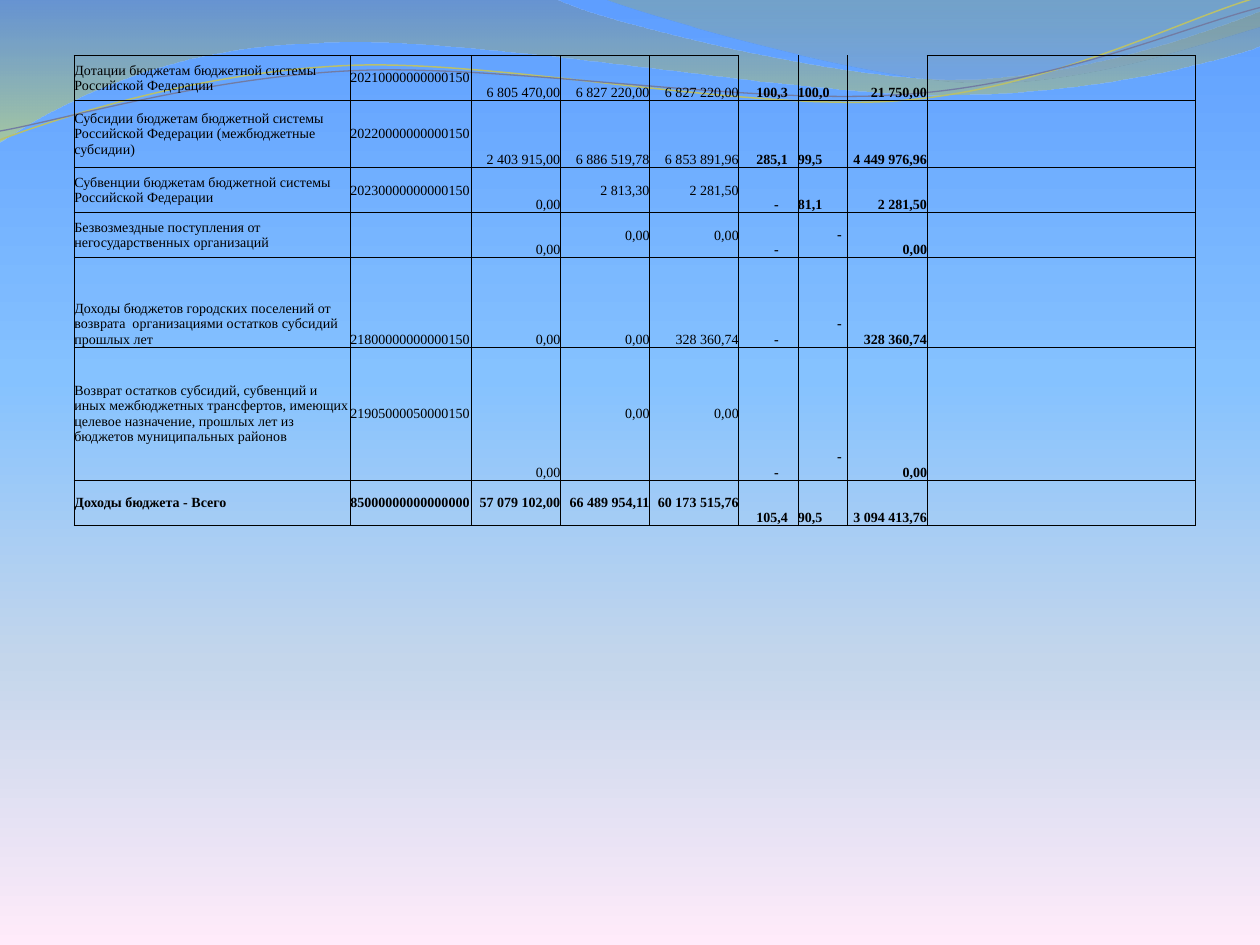
from lxml.etree import SubElement
from pptx import Presentation
from pptx.dml.color import RGBColor as RGB
from pptx.enum.text import MSO_ANCHOR as ANCHOR, PP_ALIGN as ALIGN
from pptx.oxml.ns import qn
from pptx.util import Inches, Pt

W, H = Inches(10), Inches(7.5)
COL, ROW = W / 100, H / 75
FONT, SIZE = "Times New Roman", Pt(8)
BLACK = RGB(0, 0, 0)
GOLD, SLATE = RGB(0xB9, 0xC0, 0x6C), RGB(0x72, 0x7C, 0xA3)
SKY = [(0, RGB(0x5E, 0x9E, 0xFF), 100), (40, RGB(0x85, 0xC2, 0xFF), 100),
       (70, RGB(0xC4, 0xD6, 0xEB), 100), (100, RGB(0xFF, 0xEB, 0xFA), 100)]
LEFT_TINT = [(0, RGB(0x72, 0x88, 0x9B), 45), (100, RGB(0xD3, 0xDE, 0x57), 55)]
RIGHT_TINT = [(0, RGB(0xA4, 0xAC, 0x50), 30), (80, RGB(0x84, 0xA3, 0xBD), 45)]

LEFT_WAVE = [[(0, 0)], [(44, -0.1)],
             [(47.6, 1.7), (66.4, 6.3), (75.8, 6.3)],
             [(85.3, 6.3), (95.8, 2.6), (100, 0.9)], [(100.1, 3.6)],
             [(98.3, 4.4), (87, 7.6), (74.6, 7.5)],
             [(62.2, 7.5), (38.2, 2.8), (25.7, 3.4)],
             [(12.9, 3.6), (4.6, 8.3), (-0.1, 11.3)], [(0, 0)]]
RIGHT_WAVE = [[(47.9, -0.1)],
              [(50.9, 1.1), (68.2, 6.2), (76.9, 6.5)],
              [(85.6, 6.9), (96.1, 3.2), (100, 2.1)],
              [(100, 0)], [(47.9, -0.1)]]
GOLD_LINE = [[(0, 11.1)],
             [(4.8, 9.3), (15.8, 5.7), (27.7, 5.2)],
             [(39.5, 4.7), (59.3, 8.9), (71.3, 8)],
             [(83.3, 7.1), (93.8, 1.5), (99.8, -0.2)]]
SLATE_LINE = [[(0, 10.4)],
              [(4.7, 9.6), (16.4, 6.1), (28.3, 5.6)],
              [(40.3, 5.1), (59.7, 8.4), (71.7, 7.5)],
              [(83.6, 6.7), (94.1, 2.1), (100, 0.6)]]

COL_WIDTHS = [21.9, 9.6, 7.08, 7.08, 7.08, 4.7, 3.95, 6.3, 21.3]
ROW_HEIGHTS = [3.57, 5.35, 3.57, 3.57, 7.1, 10.6, 3.57]
ANCHORS = ["mmbbb", "mmbbb", "mmbmm", "mmbmm", "bbbbb", "mmbmm", "mmmmm"]
RIGHT_COLS, BOLD_COLS, OPEN_TOP_COLS = (2, 3, 4, 7), (5, 6, 7), (5, 6, 7)
NUMBER_INDENT, DASH_INDENT, DASH_RAISE = {5: 1.4}, {5: 2.8, 6: 3.1}, {6: 1.25}
INCOME = [
    ["Дотации бюджетам бюджетной системы Российской Федерации", "20210000000000150",
     "6 805 470,00", "6 827 220,00", "6 827 220,00", "100,3", "100,0", "21 750,00", ""],
    ["Субсидии бюджетам бюджетной системы Российской Федерации (межбюджетные субсидии)",
     "20220000000000150",
     "2 403 915,00", "6 886 519,78", "6 853 891,96", "285,1", "99,5", "4 449 976,96", ""],
    ["Субвенции бюджетам бюджетной системы Российской Федерации", "20230000000000150",
     "0,00", "2 813,30", "2 281,50", "-", "81,1", "2 281,50", ""],
    ["Безвозмездные поступления от негосударственных организаций", "",
     "0,00", "0,00", "0,00", "-", "-", "0,00", ""],
    ["Доходы бюджетов городских поселений от возврата  организациями остатков "
     "субсидий прошлых лет", "21800000000000150",
     "0,00", "0,00", "328 360,74", "-", "-", "328 360,74", ""],
    ["Возврат остатков субсидий, субвенций и иных межбюджетных трансфертов, имеющих "
     "целевое назначение, прошлых лет из бюджетов муниципальных районов",
     "21905000050000150", "0,00", "0,00", "0,00", "-", "-", "0,00", ""],
    ["Доходы бюджета - Всего", "85000000000000000",
     "57 079 102,00", "66 489 954,11", "60 173 515,76", "105,4", "90,5",
     "3 094 413,76", ""],
]
TOTAL = len(INCOME) - 1


def set_gradient(fill, element, stops):
    """Apply a top-to-bottom gradient of (position, colour, opacity) stops."""
    fill.gradient()
    grad = element.find(".//" + qn("a:gradFill"))
    gs_list = grad.find(qn("a:gsLst"))
    gs_list.clear()
    for pos, color, opacity in stops:
        gs = SubElement(gs_list, qn("a:gs"), pos=str(pos * 1000))
        clr = SubElement(gs, qn("a:srgbClr"), val=str(color))
        if opacity < 100:
            SubElement(clr, qn("a:alpha"), val=str(opacity * 1000))
    grad.find(qn("a:lin")).set("ang", "5400000")


def bend(sp, segments):
    """Join each run of three points into one cubic curve."""
    lines = iter(sp.element.findall(".//" + qn("a:lnTo")))
    for segment in segments[1:]:
        group = [next(lines) for _ in segment]
        if len(group) == 3:
            curve = group[0]
            for line in group[1:]:
                curve.append(line[0])
                line.getparent().remove(line)
            curve.tag = qn("a:cubicBezTo")


def add_outline(slide, segments, close):
    """Add a shadowless freeform of straight and cubic segments."""
    start, *rest = [(round(x * COL), round(y * ROW))
                    for segment in segments for x, y in segment]
    builder = slide.shapes.build_freeform(*start, scale=1.0)
    builder.add_line_segments(rest, close=close)
    sp = builder.convert_to_shape()
    sp.shadow.inherit = False
    bend(sp, segments)
    return sp


def add_wave(slide, segments, stops):
    """Add a translucent wave without an outline."""
    sp = add_outline(slide, segments, True)
    set_gradient(sp.fill, sp.element.spPr, stops)
    sp.line.fill.background()


def add_curve(slide, segments, color, width):
    """Add an open curved line."""
    sp = add_outline(slide, segments, False)
    sp.fill.background()
    sp.line.color.rgb = color
    sp.line.width = Pt(width)


def set_borders(cell, row, col):
    """Draw the cell's borders, heavier at the sides and round the total row."""
    inner = col not in OPEN_TOP_COLS
    heavy = {"L": col == 0, "R": col == len(COL_WIDTHS) - 1,
             "T": inner and row == TOTAL, "B": inner and row >= TOTAL - 1}
    tc_pr = cell._tc.get_or_add_tcPr()
    for side, is_heavy in heavy.items():
        ln = SubElement(tc_pr, qn("a:ln" + side), w=str(Pt(1 if is_heavy else 0.5)))
        if side == "T" and row == 0 and not inner:
            SubElement(ln, qn("a:noFill"))
        else:
            SubElement(SubElement(ln, qn("a:solidFill")), qn("a:srgbClr"), val=str(BLACK))


def fill_cell(cell, text, row, col):
    """Write and format one table cell."""
    set_borders(cell, row, col)
    cell.fill.background()
    is_dash = text == "-"
    indent = (DASH_INDENT if is_dash else NUMBER_INDENT).get(col, 0)
    cell.margin_left = round(indent * COL)
    cell.margin_right = cell.margin_top = 0
    cell.margin_bottom = round(DASH_RAISE.get(col, 0) * ROW) if is_dash else 0
    middle = ANCHORS[row][col:col + 1] == "m"
    cell.vertical_anchor = ANCHOR.MIDDLE if middle else ANCHOR.BOTTOM
    cell.text_frame.text = text
    p = cell.text_frame.paragraphs[0]
    p.alignment = ALIGN.RIGHT if col in RIGHT_COLS else ALIGN.LEFT
    for r in p.runs:
        r.font.name, r.font.size = FONT, SIZE
        r.font.bold = row == TOTAL or col in BOLD_COLS
        r.font.color.rgb = BLACK


def add_income_table(slide):
    """Add the budget income table."""
    table = slide.shapes.add_table(
        len(ROW_HEIGHTS), len(COL_WIDTHS), round(5.9 * COL), round(4.4 * ROW),
        round(sum(COL_WIDTHS) * COL), round(sum(ROW_HEIGHTS) * ROW)).table
    table.first_row = table.horz_banding = False
    for column, width in zip(table.columns, COL_WIDTHS):
        column.width = round(width * COL)
    for i, (height, values) in enumerate(zip(ROW_HEIGHTS, INCOME)):
        table.rows[i].height = round(height * ROW)
        for j, text in enumerate(values):
            fill_cell(table.cell(i, j), text, i, j)


def main():
    """Build and save the slide."""
    prs = Presentation()
    prs.slide_width, prs.slide_height = W, H
    slide = prs.slides.add_slide(prs.slide_layouts[6])
    set_gradient(slide.background.fill, slide.element, SKY)
    add_wave(slide, LEFT_WAVE, LEFT_TINT)
    add_wave(slide, RIGHT_WAVE, RIGHT_TINT)
    add_curve(slide, GOLD_LINE, GOLD, 0.85)
    add_curve(slide, SLATE_LINE, SLATE, 0.75)
    add_income_table(slide)
    prs.save("out.pptx")


if __name__ == "__main__":
    main()
